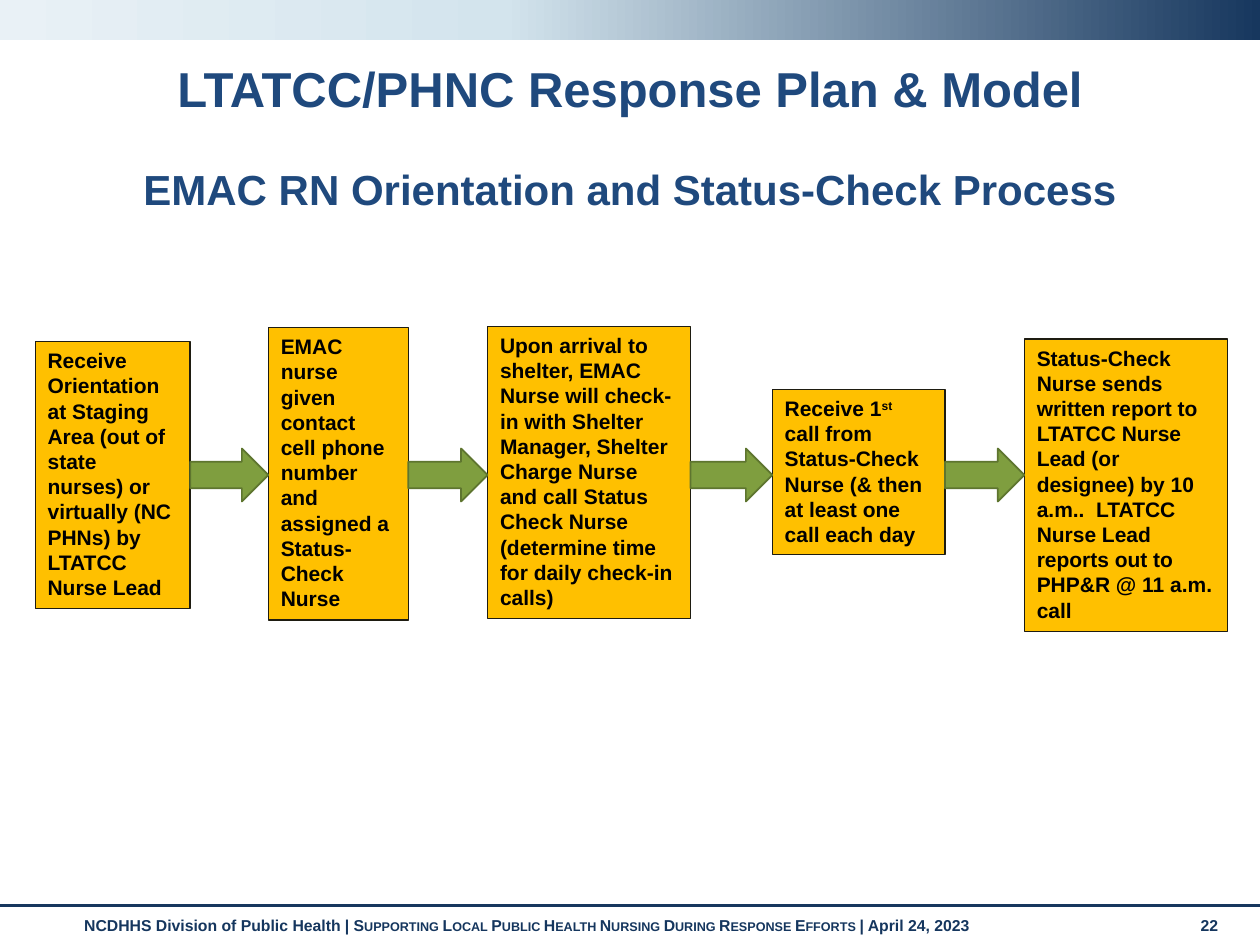
from lxml.etree import SubElement
from pptx import Presentation
from pptx.dml.color import RGBColor
from pptx.enum.shapes import MSO_CONNECTOR as Connector, MSO_SHAPE as Shape
from pptx.enum.text import MSO_ANCHOR as Anchor, MSO_AUTO_SIZE as AutoSize, PP_ALIGN as Align
from pptx.oxml.ns import qn
from pptx.util import Inches, Pt

COLORS = {
    "navy": "17375E", "footer": "15365E", "title": "1F497D", "sky": "D3E4ED",
    "mist": "E9F1F6", "box": "FFC000", "box_line": "1E1C11",
    "arrow": "7F9E3F", "arrow_line": "5E752F", "text": "000000",
}
BAND_STOPS = [(0, "navy"), (60, "sky"), (100, "mist")]
ARROW_TOP, ARROW_HEIGHT = 3.56, 0.42
STEPS = [
    ((0.28, 2.71, 1.23, 2.12), [[
        ("Receive Orientation at Staging Area (out of state nurses) or virtually "
         "(NC PHNs) by LTATCC Nurse Lead", {})]]),
    ((2.13, 2.6, 1.11, 2.32), [
        [("EMAC nurse given contact cell phone number and", {})],
        [("assigned a Status-Check Nurse", {})]]),
    ((3.87, 2.59, 1.61, 2.32), [[
        ("Upon arrival to shelter, EMAC Nurse will check-in with Shelter Manager, "
         "Shelter Charge Nurse and call Status Check Nurse "
         "(determine time for daily check-in calls)", {})]]),
    ((6.13, 3.09, 1.37, 1.31), [[
        ("Receive 1", {}), ("st", {"baseline": "30000"}),
        (" call from Status-Check Nurse (& then at least one call each day", {})]]),
    ((8.13, 2.69, 1.61, 2.32), [[
        ("Status-Check Nurse sends written report to LTATCC Nurse Lead (or designee) "
         "by 10 a.m..  LTATCC Nurse Lead reports out to PHP&R @ 11 a.m. call", {})]]),
]
FOOTER = [
    ("NCDHHS Division of Public Health | ", {}),
    ("Supporting Local Public Health Nursing During Response Efforts ", {"cap": "small"}),
    ("| April 24, 2023", {}),
]


def rgb(name):
    """Return the named colour."""
    return RGBColor.from_string(COLORS[name])


def set_attributes(target, values):
    """Set each attribute of the target from a dict."""
    for name, value in values.items():
        setattr(target, name, value)


def add_run(paragraph, text, size, color, extras):
    """Add a bold Arial run with extra run properties."""
    run = paragraph.add_run()
    run.text = text
    set_attributes(run.font, {"name": "Arial", "size": Pt(size), "bold": True})
    run.font.color.rgb = rgb(color)
    for name, value in extras.items():
        run.font._element.set(name, value)


def write_text(frame, paragraphs, size, color):
    """Fill a text frame with left-aligned paragraphs of runs."""
    set_attributes(frame, {"word_wrap": True, "vertical_anchor": Anchor.TOP})
    for index, runs in enumerate(paragraphs):
        paragraph = frame.add_paragraph() if index else frame.paragraphs[0]
        paragraph.alignment = Align.LEFT
        for text, extras in runs:
            add_run(paragraph, text, size, color, extras)


def add_filled_shape(slide, kind, place, fill, line, width):
    """Add a preset shape with a solid fill and an outline."""
    shape = slide.shapes.add_shape(kind, *map(Inches, place))
    shape.shadow.inherit = False
    shape.fill.solid()
    shape.fill.fore_color.rgb = rgb(fill)
    shape.line.color.rgb = rgb(line)
    shape.line.width = Pt(width)
    return shape


def add_band(slide):
    """Add the gradient band along the top edge."""
    band = slide.shapes.add_shape(Shape.RECTANGLE, 0, 0, Inches(10), Inches(0.32))
    band.shadow.inherit = False
    band.line.fill.background()
    band.fill.gradient()
    band.fill.gradient_angle = 180
    stops = band._element.spPr.find(qn("a:gradFill")).find(qn("a:gsLst"))
    stops.clear()
    for position, color in BAND_STOPS:
        stop = SubElement(stops, qn("a:gs"), pos=str(position * 1000))
        SubElement(stop, qn("a:srgbClr"), val=COLORS[color])


def add_footer(slide):
    """Add the footer rule, footer text and slide number."""
    rule = slide.shapes.add_connector(
        Connector.STRAIGHT, 0, Inches(7.19), Inches(10), Inches(7.19))
    rule.line.color.rgb = rgb("navy")
    rule.line.width = Pt(1.75)
    SubElement(rule._element.spPr, qn("a:effectLst"))
    for left, width, runs in [(0.57, 8.74, FOOTER), (9.43, 0.44, [("22", {})])]:
        box = slide.shapes.add_textbox(*map(Inches, (left, 7.22, width, 0.3)))
        write_text(box.text_frame, [runs], 9, "footer")


def format_title(slide):
    """Place the title placeholder and write its two lines."""
    title = slide.shapes.title
    place = dict(zip(("left", "top", "width", "height"),
                     map(Inches, (0.71, 0.47, 8.58, 0.6))))
    set_attributes(title, place)
    frame = title.text_frame
    set_attributes(frame, {"word_wrap": True, "vertical_anchor": Anchor.TOP,
                           "auto_size": AutoSize.NONE})
    lines = [("LTATCC/PHNC Response Plan & Model", 28, 0),
             ("EMAC RN Orientation and Status-Check Process", 24, 29)]
    for index, (text, size, gap) in enumerate(lines):
        paragraph = frame.add_paragraph() if index else frame.paragraphs[0]
        set_attributes(paragraph, {"alignment": Align.CENTER, "line_spacing": 0.9,
                                   "space_before": Pt(gap)})
        add_run(paragraph, text, size, "title", {})


def add_step(slide, place, paragraphs):
    """Add one process box."""
    box = add_filled_shape(slide, Shape.RECTANGLE, place, "box", "box_line", 0.75)
    write_text(box.text_frame, paragraphs, 12, "text")
    box.text_frame.auto_size = AutoSize.SHAPE_TO_FIT_TEXT


def add_arrow(slide, start, end):
    """Add a block arrow that fills the gap between two boxes."""
    add_filled_shape(slide, Shape.RIGHT_ARROW,
                     (start, ARROW_TOP, end - start, ARROW_HEIGHT),
                     "arrow", "arrow_line", 1)


def main():
    """Build and save the slide."""
    presentation = Presentation()
    set_attributes(presentation, {"slide_width": Inches(10), "slide_height": Inches(7.5)})
    slide = presentation.slides.add_slide(presentation.slide_layouts[5])
    add_band(slide)
    add_footer(slide)
    format_title(slide)
    for place, paragraphs in STEPS:
        add_step(slide, place, paragraphs)
    for (current, _), (following, _) in zip(STEPS, STEPS[1:]):
        add_arrow(slide, current[0] + current[2], following[0])
    presentation.save("out.pptx")


if __name__ == "__main__":
    main()
